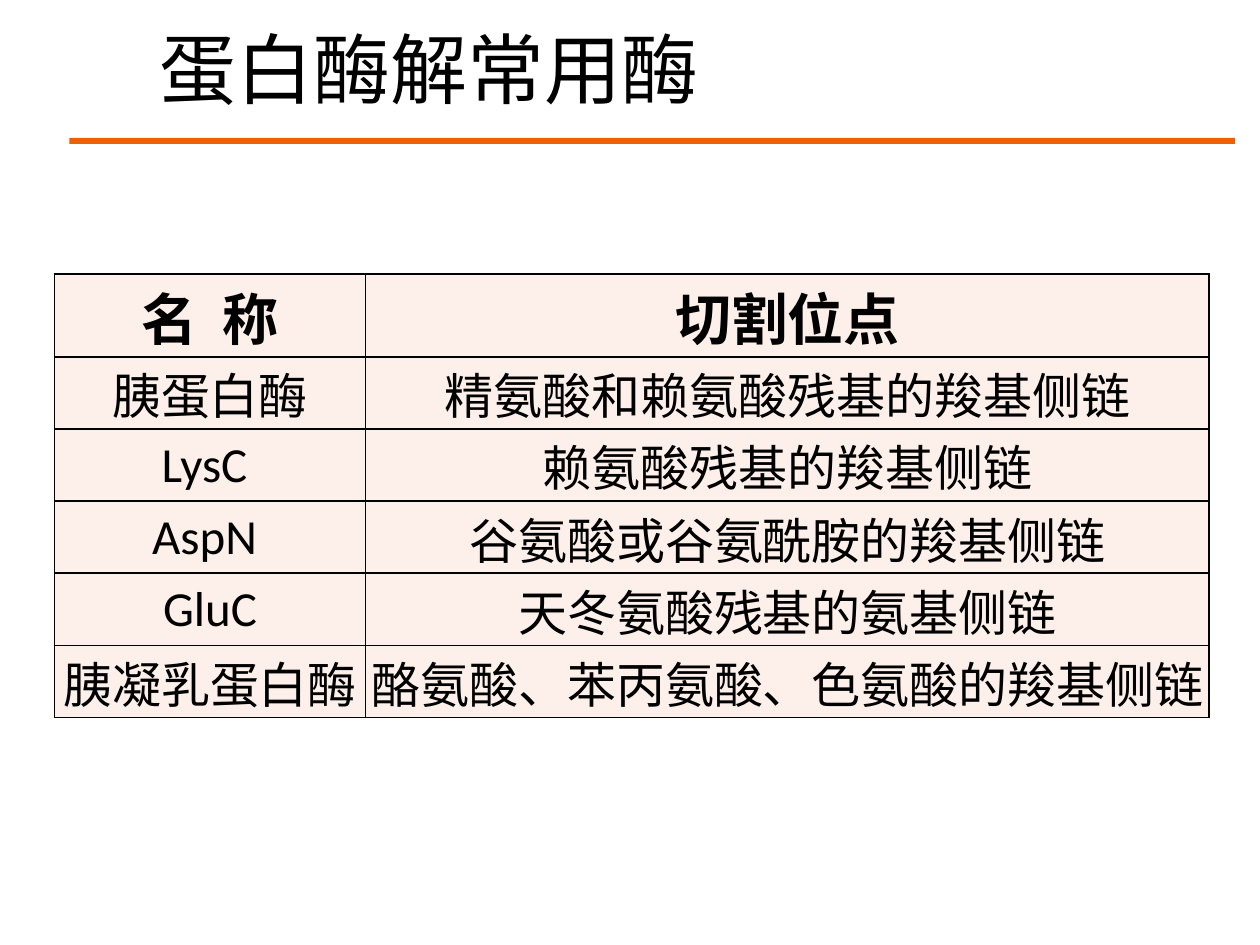
from lxml.etree import SubElement
from pptx import Presentation
from pptx.dml.color import RGBColor
from pptx.enum.shapes import MSO_SHAPE as Shape
from pptx.enum.text import MSO_ANCHOR as Anchor, MSO_AUTO_SIZE as AutoSize, PP_ALIGN as Align
from pptx.oxml.ns import qn
from pptx.util import Pt

BLACK, ORANGE, PALE = "000000", "EE6000", "FDEFE9"
ROWS = [
    ("名  称", "切割位点"),
    ("胰蛋白酶", "精氨酸和赖氨酸残基的羧基侧链"),
    ("LysC ", "赖氨酸残基的羧基侧链"),
    ("AspN ", "谷氨酸或谷氨酰胺的羧基侧链"),
    ("GluC", "天冬氨酸残基的氨基侧链"),
    ("胰凝乳蛋白酶", "酪氨酸、苯丙氨酸、色氨酸的羧基侧链"),
]


def color(value):
    return RGBColor.from_string(value)


class SlideBuilder:
    """Holds the style and the current slide."""

    font_name = "Calibri"
    text_color = BLACK

    def __init__(self, slide):
        self.slide = slide

    def format_text(self, paragraph, size, align, bold=False):
        paragraph.alignment = align
        for run in paragraph.runs:
            run.font.name = self.font_name
            run.font.size = Pt(size)
            run.font.bold = bold
            run.font.color.rgb = color(self.text_color)

    def title(self, text, left, top, width, height):
        title = self.slide.shapes.title
        title.left, title.top, title.width, title.height = map(Pt, (left, top, width, height))
        frame = title.text_frame
        frame.text = text
        frame.auto_size = AutoSize.NONE
        frame.vertical_anchor = Anchor.MIDDLE
        paragraph = frame.paragraphs[0]
        paragraph.line_spacing = 0.9
        self.format_text(paragraph, 44, Align.LEFT)

    def bar(self, left, top, width, height, fill):
        bar = self.slide.shapes.add_shape(Shape.RECTANGLE, *map(Pt, (left, top, width, height)))
        bar.shadow.inherit = False
        bar.fill.solid()
        bar.fill.fore_color.rgb = color(fill)
        bar.line.fill.background()

    def table(self, rows, left, top, column_widths, row_height):
        frame = self.slide.shapes.add_table(
            len(rows), len(column_widths), Pt(left), Pt(top),
            Pt(sum(column_widths)), Pt(row_height * len(rows)))
        table = frame.table
        table.first_row = table.horz_banding = False
        for column, width in zip(table.columns, column_widths):
            column.width = Pt(width)
        for row_index, texts in enumerate(rows):
            table.rows[row_index].height = Pt(row_height)
            for column_index, text in enumerate(texts):
                self.cell(table.cell(row_index, column_index), text, header=row_index == 0)

    def cell(self, cell, text, header):
        cell.text_frame.text = text
        cell.vertical_anchor = Anchor.MIDDLE
        cell.margin_left = cell.margin_right = cell.margin_top = Pt(0.75)
        cell.margin_bottom = 0
        self.format_text(cell.text_frame.paragraphs[0], 32 if header else 28, Align.CENTER, header)
        self.borders(cell, BLACK, 1)
        cell.fill.solid()
        cell.fill.fore_color.rgb = color(PALE)

    def borders(self, cell, line_color, width):
        """Draw all four sides; must run before the cell is filled."""
        properties = cell._tc.get_or_add_tcPr()
        for side in ("a:lnL", "a:lnR", "a:lnT", "a:lnB"):
            line = SubElement(properties, qn(side), w=str(Pt(width)))
            SubElement(SubElement(line, qn("a:solidFill")), qn("a:srgbClr"), val=line_color)


def main():
    presentation = Presentation()
    presentation.slide_width, presentation.slide_height = Pt(720), Pt(540)
    title_only = presentation.slide_layouts[5]
    builder = SlideBuilder(presentation.slides.add_slide(title_only))
    builder.table(ROWS, 31, 156.7, column_widths=(178, 482), row_height=28)
    builder.bar(39.6, 78.8, 666, 3.4, ORANGE)
    builder.title("蛋白酶解常用酶", 84.2, 16.6, 574, 51)
    presentation.save("out.pptx")


if __name__ == "__main__":
    main()
